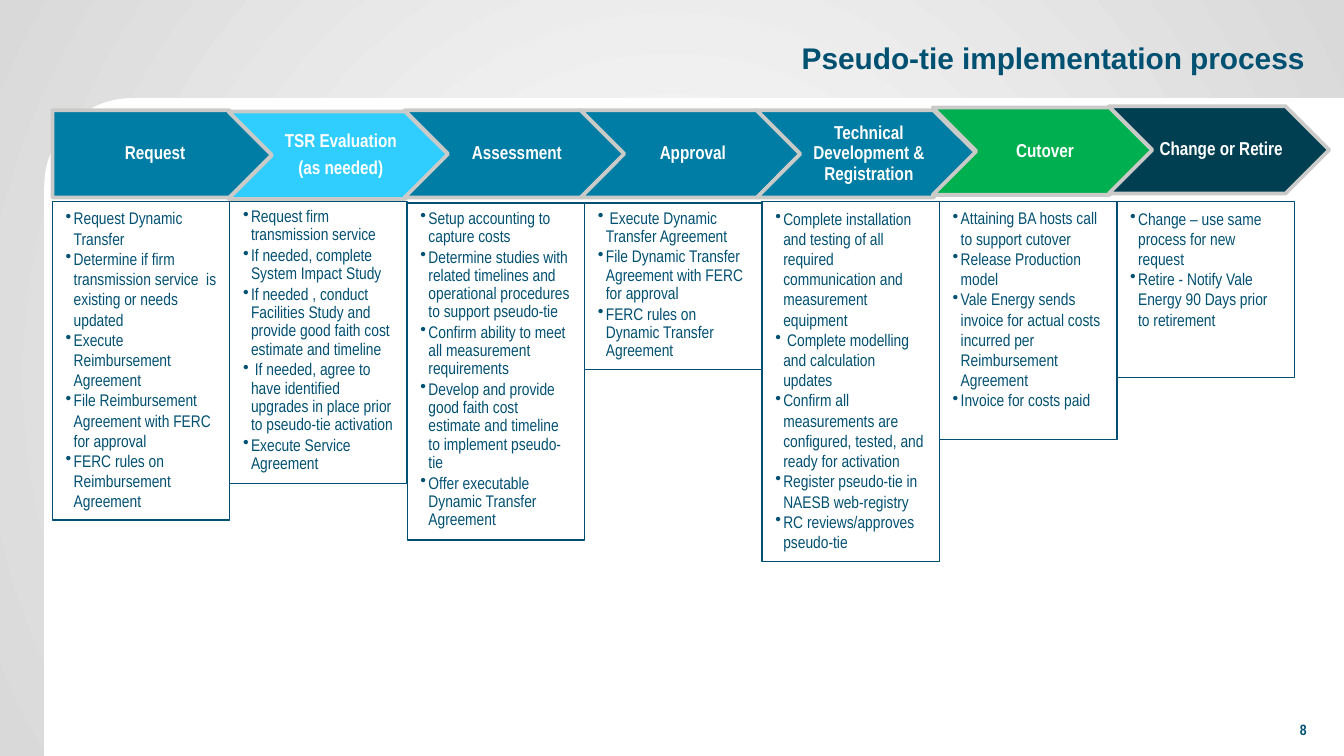
from lxml import etree
from pptx import Presentation
from pptx.dml.color import RGBColor
from pptx.enum import shapes, text
from pptx.oxml.ns import qn
from pptx.util import Inches, Pt

NAVY, BLUE, SKY, GREEN, DARK = "005072", "007DA4", "2FCEFF", "00B050", "003E52"
WHITE, SILVER, GREY = "FFFFFF", "CACAC8", "D9D9D9"
NARROW = "Arial Narrow"
LEFT = 0.39
ARROW_PITCH, ARROW_WIDTH, ARROW_HEIGHT = 1.31, 1.64, 0.65
STEP_PITCH = 1.32

# heading, arrow top, arrow colour, steps top, steps height, tight spacing, steps
STAGES = [
    ("Request", 0.82, BLUE, 1.5, 2.37, False, [
        "Request Dynamic Transfer",
        "Determine if firm transmission service  is existing or needs updated",
        "Execute Reimbursement Agreement",
        "File Reimbursement Agreement with FERC for approval",
        "FERC rules on Reimbursement Agreement"]),
    ("TSR Evaluation\n(as needed)", 0.83, SKY, 1.5, 2.1, True, [
        "Request firm transmission service",
        "If needed, complete System Impact Study",
        "If needed , conduct Facilities Study and provide good faith cost "
        "estimate and timeline",
        " If needed, agree to have identified upgrades in place prior to "
        "pseudo-tie activation",
        "Execute Service Agreement"]),
    ("Assessment", 0.82, BLUE, 1.51, 2.51, True, [
        "Setup accounting to capture costs",
        "Determine studies with related timelines and operational procedures "
        "to support pseudo-tie",
        "Confirm ability to meet all measurement requirements",
        "Develop and provide good faith cost estimate and timeline to "
        "implement pseudo-tie",
        "Offer executable Dynamic Transfer Agreement"]),
    ("Approval", 0.82, BLUE, 1.51, 1.24, True, [
        " Execute Dynamic Transfer Agreement",
        "File Dynamic Transfer Agreement with FERC for approval",
        "FERC rules on Dynamic Transfer Agreement"]),
    ("Technical Development & Registration", 0.82, BLUE, 1.5, 2.68, False, [
        "Complete installation and testing of all required communication and "
        "measurement equipment",
        " Complete modelling and calculation updates",
        "Confirm all measurements are configured, tested, and ready for "
        "activation",
        "Register pseudo-tie in NAESB web-registry",
        "RC reviews/approves pseudo-tie"]),
    ("Cutover", 0.8, GREEN, 1.5, 1.77, False, [
        "Attaining BA hosts call to support cutover",
        "Release Production model",
        "Vale Energy sends invoice for actual costs incurred per "
        "Reimbursement Agreement",
        "Invoice for costs paid"]),
    ("Change or Retire", 0.79, DARK, 1.5, 1.31, False, [
        "Change – use same process for new request",
        "Retire - Notify Vale Energy 90 Days prior to retirement"]),
]


def color(hex_value):
    return RGBColor.from_string(hex_value)


def style_text(frame, size, hex_value, font=NARROW, bold=False,
               align=text.PP_ALIGN.LEFT, spacing=1.0, after=0):
    frame.word_wrap = True
    for paragraph in frame.paragraphs:
        paragraph.alignment = align
        paragraph.line_spacing = spacing
        paragraph.space_before, paragraph.space_after = Pt(0), Pt(after)
        for run in paragraph.runs:
            run.font.name, run.font.size, run.font.bold = font, Pt(size), bold
            run.font.color.rgb = color(hex_value)


def add_bullets(frame, indent):
    for paragraph in frame.paragraphs:
        properties = paragraph._p.get_or_add_pPr()
        properties.set("marL", str(Inches(indent)))
        properties.set("indent", str(-Inches(indent)))
        etree.SubElement(properties, qn("a:buChar")).set("char", "•")


def add_box(slide, kind, box, fill=None, line=None, line_width=0):
    shape = slide.shapes.add_shape(kind, *map(Inches, box))
    shape.shadow.inherit = False
    if fill:
        shape.fill.solid()
        shape.fill.fore_color.rgb = color(fill)
    else:
        shape.fill.background()
    if line:
        shape.line.color.rgb = color(line)
        shape.line.width = Pt(line_width)
    else:
        shape.line.fill.background()
    return shape


def add_backdrop(slide, box):
    """Radial grey background with a white panel rounded at its top left."""
    fill = slide.background.fill
    fill.gradient()
    for stop, hex_value in zip(fill.gradient_stops, (WHITE, GREY)):
        stop.color.rgb = color(hex_value)
    linear = slide.element.find(".//" + qn("a:lin"))
    radial = etree.Element(qn("a:path"), {"path": "circle"})
    etree.SubElement(radial, qn("a:fillToRect"),
                     dict.fromkeys("ltrb", "50000"))
    linear.getparent().replace(linear, radial)

    panel = add_box(slide, shapes.MSO_SHAPE.ROUND_1_RECTANGLE, box, WHITE)
    panel.adjustments[0] = 0.134
    panel.element.spPr.xfrm.set("flipH", "1")


def place_title(slide, box, wording):
    title = slide.shapes.title
    title.left, title.top, title.width, title.height = map(Inches, box)
    title.text_frame.text = wording
    title.text_frame.vertical_anchor = text.MSO_ANCHOR.MIDDLE
    style_text(title.text_frame, 16, NAVY, "Arial", True,
               text.PP_ALIGN.RIGHT, 0.85)


def add_page_number(slide, box, number):
    frame = slide.shapes.add_textbox(*map(Inches, box)).text_frame
    frame.text = number
    style_text(frame, 8, NAVY, bold=True, align=text.PP_ALIGN.RIGHT)


def add_arrow(slide, box, heading, fill, first):
    kind = shapes.MSO_SHAPE.PENTAGON if first else shapes.MSO_SHAPE.CHEVRON
    frame = add_box(slide, kind, box, fill, SILVER, 2).text_frame
    frame.text = heading
    frame.vertical_anchor = text.MSO_ANCHOR.MIDDLE
    frame.margin_left = Inches(0.06 if first else 0.04)
    frame.margin_right = Inches(0.01)
    frame.margin_top = frame.margin_bottom = Inches(0.03)
    style_text(frame, 10, WHITE, bold=True, align=text.PP_ALIGN.CENTER,
               spacing=0.9, after=3.5)
    frame.paragraphs[-1].space_after = Pt(0)


def add_steps(slide, box, steps, tight):
    frame = add_box(slide, shapes.MSO_SHAPE.RECTANGLE, box,
                    line=NAVY, line_width=0.75).text_frame
    frame.text = "\n".join(steps)
    frame.vertical_anchor = text.MSO_ANCHOR.TOP
    style_text(frame, 9, NAVY, spacing=0.9 if tight else 1.0,
               after=1.35 if tight else 0)
    add_bullets(frame, 0.06)


def main():
    deck = Presentation()
    deck.slide_width = Inches(10)
    deck.slide_height = deck.slide_width * 9 // 16
    slide = deck.slides.add_slide(deck.slide_layouts.get_by_name("Title Only"))
    add_backdrop(slide, (0.33, 0.73, 9.67, 4.9))
    place_title(slide, (0.45, 0.19, 9.36, 0.52),
                "Pseudo-tie implementation process")
    add_page_number(slide, (7.49, 5.31, 2.33, 0.39), "8")
    for i, (heading, arrow_top, fill, top, height, tight, steps) in enumerate(STAGES):
        add_arrow(slide, (LEFT + i * ARROW_PITCH, arrow_top,
                          ARROW_WIDTH, ARROW_HEIGHT), heading, fill, i == 0)
        add_steps(slide, (LEFT + i * STEP_PITCH, top, STEP_PITCH, height),
                  steps, tight)
    deck.save("out.pptx")


if __name__ == "__main__":
    main()
